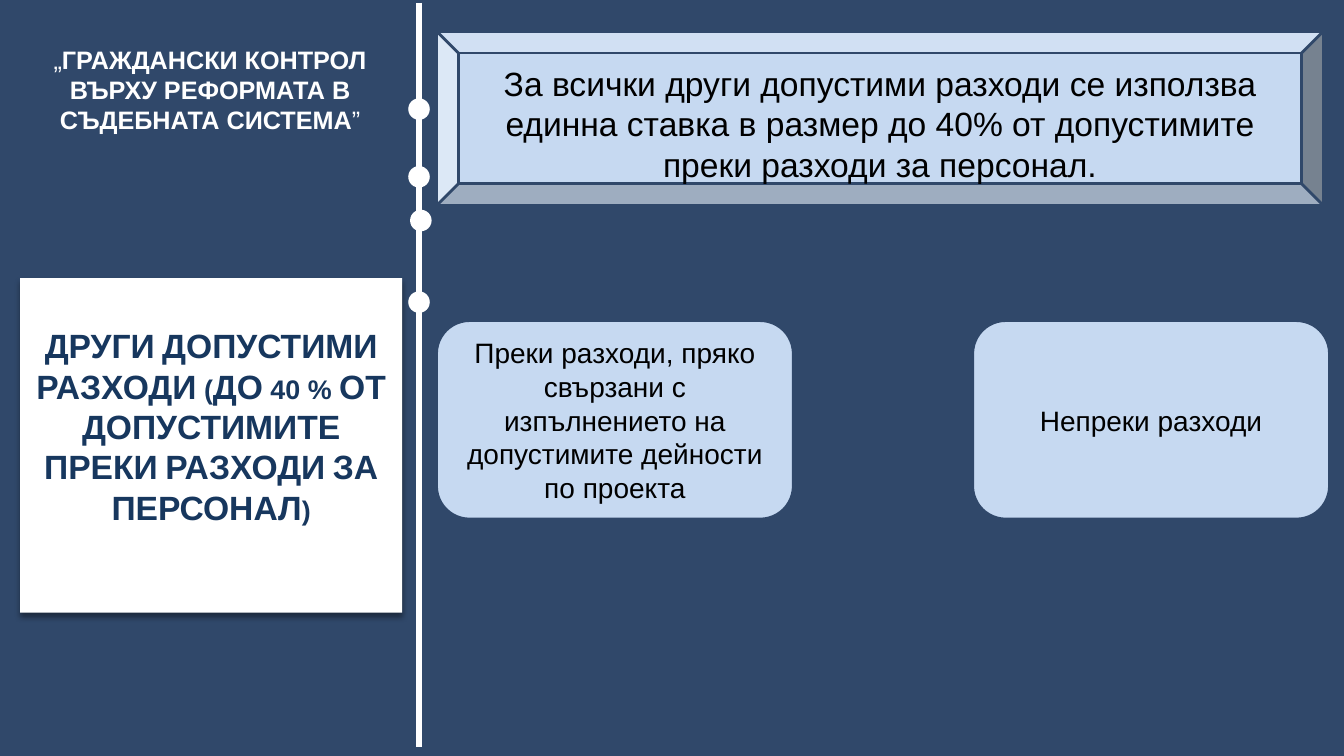
import lxml.etree
import pptx
import pptx.dml.color
import pptx.enum.shapes
import pptx.enum.text
import pptx.oxml
import pptx.oxml.ns
import pptx.util

Pt = pptx.util.Pt
SHAPE = pptx.enum.shapes.MSO_SHAPE
ANCHOR = pptx.enum.text.MSO_ANCHOR

COLORS = {"navy": "30486A", "white": "FFFFFF", "ink": "17375E",
          "light": "C6D9F1", "black": "000000"}

TITLE = "ДРУГИ ДОПУСТИМИ РАЗХОДИ (ДО 40 % ОТ ДОПУСТИМИТЕ ПРЕКИ РАЗХОДИ ЗА ПЕРСОНАЛ)"
PROJECT = [("„", False),
           ("ГРАЖДАНСКИ КОНТРОЛ ВЪРХУ РЕФОРМАТА В СЪДЕБНАТА СИСТЕМА", True),
           ("”", False)]
RULE = ("За всички други допустими разходи се използва единна ставка "
        "в размер до 40% от допустимите преки разходи за персонал.")
COST_TYPES = ["Преки разходи, пряко свързани с изпълнението на допустимите дейности по проекта",
              "Непреки разходи"]

SLIDE_SIZE = (960, 540)
TITLE_BOX = (14.4, 198.7, 272.9, 239)
PROJECT_BOX = (14.4, 28.1, 271.4, 72.7)
RULE_BOX = (311.8, 22.3, 633.6, 124.6)
COST_BOX = (311.8, 229, 254.9, 141.8)
COST_STEP = 383
TIMELINE_X, TIMELINE_TOP, TIMELINE_BOTTOM = 299.2, 2, 533.5
DOT_SIZE = 15.4
DOTS = [(291.6, 70.2), (291.6, 118.6), (292.9, 149.8), (291.6, 208.1)]


def rgb(name):
    return pptx.dml.color.RGBColor.from_string(COLORS[name])


def points(values):
    return [Pt(value) for value in values]


def write(shape, runs, size, color, **frame_format):
    """Fill one centred paragraph with (text, bold) runs."""
    frame = shape.text_frame
    settings = {"word_wrap": True, "vertical_anchor": ANCHOR.MIDDLE,
                "auto_size": pptx.enum.text.MSO_AUTO_SIZE.NONE, **frame_format}
    for name, value in settings.items():
        setattr(frame, name, value)
    paragraph = frame.paragraphs[0]
    paragraph.alignment = pptx.enum.text.PP_ALIGN.CENTER
    for text, bold in runs:
        run = paragraph.add_run()
        run.text = text
        for name, value in {"name": "Arial", "size": Pt(size), "bold": bold}.items():
            setattr(run.font, name, value)
        run.font.color.rgb = rgb(color)


def paint(shape, fill, line=None):
    shape.fill.solid()
    shape.fill.fore_color.rgb = rgb(fill)
    if line:
        shape.line.color.rgb = rgb(line)
        shape.line.width = Pt(2)
    else:
        shape.line.fill.background()


def add_shape(slide, kind, box, fill, line=None):
    shape = slide.shapes.add_shape(kind, *points(box))
    shape.shadow.inherit = False
    paint(shape, fill, line)
    return shape


def add_title(slide):
    title = slide.shapes.title
    for name, value in zip(("left", "top", "width", "height"), points(TITLE_BOX)):
        setattr(title, name, value)
    paint(title, "white")
    write(title, [(TITLE, True)], 24, "ink", margin_bottom=Pt(31.2))
    title.text_frame.paragraphs[0].runs[0].font._element.set("cap", "small")
    title._element.spPr.append(pptx.oxml.parse_xml(
        f'<a:effectLst {pptx.oxml.ns.nsdecls("a")}>'
        f'<a:outerShdw blurRad="{Pt(4)}" dist="{Pt(3)}" dir="5400000" rotWithShape="0">'
        f'<a:srgbClr val="{COLORS["black"]}"><a:alpha val="40000"/></a:srgbClr>'
        '</a:outerShdw></a:effectLst>'))


def add_timeline(slide):
    line = slide.shapes.add_connector(
        pptx.enum.shapes.MSO_CONNECTOR.STRAIGHT,
        *points((TIMELINE_X, TIMELINE_TOP, TIMELINE_X, TIMELINE_BOTTOM)))
    line.line.color.rgb = rgb("white")
    line.line.width = Pt(4.5)
    lxml.etree.SubElement(line._element.spPr, pptx.oxml.ns.qn("a:effectLst"))
    for left, top in DOTS:
        add_shape(slide, SHAPE.OVAL, (left, top, DOT_SIZE, DOT_SIZE), "white")


def main():
    presentation = pptx.Presentation()
    presentation.slide_width, presentation.slide_height = points(SLIDE_SIZE)
    slide = presentation.slides.add_slide(presentation.slide_layouts[5])
    slide.background.fill.solid()
    slide.background.fill.fore_color.rgb = rgb("navy")

    add_title(slide)
    add_timeline(slide)
    project = slide.shapes.add_textbox(*points(PROJECT_BOX))
    write(project, PROJECT, 18, "white", vertical_anchor=ANCHOR.TOP)

    rule = add_shape(slide, SHAPE.BEVEL, RULE_BOX, "light", "navy")
    write(rule, [(RULE, False)], 24, "black", margin_top=Pt(7), margin_bottom=0)

    left, top, width, height = COST_BOX
    for index, text in enumerate(COST_TYPES):
        box = (left + index * COST_STEP, top, width, height)
        cost = add_shape(slide, SHAPE.ROUNDED_RECTANGLE, box, "light", "navy")
        write(cost, [(text, False)], 20, "black")

    presentation.save("out.pptx")


if __name__ == "__main__":
    main()
